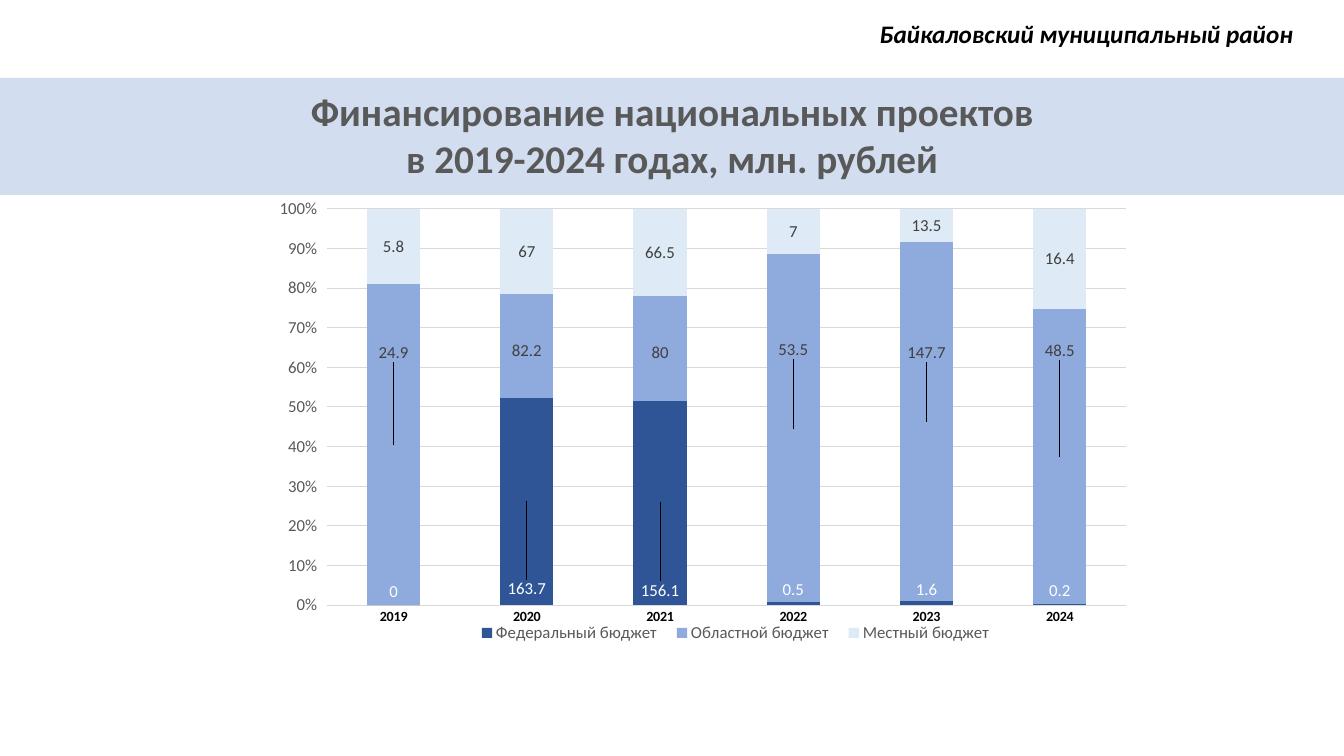
from dataclasses import dataclass

from lxml.etree import SubElement
from pptx import Presentation
from pptx.chart.data import CategoryChartData
from pptx.dml.color import RGBColor
from pptx.enum.chart import (XL_CHART_TYPE, XL_LABEL_POSITION,
                             XL_LEGEND_POSITION, XL_TICK_MARK)
from pptx.enum.shapes import MSO_SHAPE
from pptx.enum.text import MSO_ANCHOR, MSO_AUTO_SIZE, PP_ALIGN
from pptx.oxml.ns import qn
from pptx.util import Emu, Pt

PX = 914400 / 100.8


@dataclass(frozen=True)
class Theme:
    font: str = "Calibri"
    band: str = "D2DEEF"
    black: str = "000000"
    grey: str = "595959"
    dark: str = "404040"
    white: str = "FFFFFF"
    grid: str = "D9D9D9"
    title_size: int = 28
    district_size: int = 18
    chart_size: int = 12
    year_size: int = 10


THEME = Theme()

YEARS = ["2019", "2020", "2021", "2022", "2023", "2024"]
# name, fill, label colour, label level as a share of the axis (None: centred)
BUDGETS = [
    ("Федеральный бюджет", "2F5597", THEME.white, 0.04,
     [0, 163.7, 156.1, 0.5, 1.6, 0.2]),
    ("Областной бюджет", "8FAADC", THEME.dark, 0.64,
     [24.9, 82.2, 80, 53.5, 147.7, 48.5]),
    ("Местный бюджет", "DEEBF7", THEME.dark, None,
     [5.8, 67, 66.5, 7, 13.5, 16.4]),
]
PLOT = {"x": 0.09, "y": 0.03, "w": 0.91, "h": 0.86}
LEGEND = {"x": 0.25, "y": 0.92, "w": 0.61, "h": 0.06}


def px(*lengths):
    return [Emu(round(n * PX)) for n in lengths]


def style_font(font, size, color, bold=False, italic=False):
    font.name = THEME.font
    font.size = Pt(size)
    font.bold = bold
    font.italic = italic
    font.color.rgb = RGBColor.from_string(color)


def style_line(line):
    line.color.rgb = RGBColor.from_string(THEME.grid)
    line.width = Pt(0.75)


def add_band(slide, box):
    sp = slide.shapes.add_shape(MSO_SHAPE.RECTANGLE, *px(*box))
    sp.shadow.inherit = False
    sp.fill.solid()
    sp.fill.fore_color.rgb = RGBColor.from_string(THEME.band)
    sp.line.fill.background()
    # Keep the band behind the title
    slide.shapes._spTree.insert(2, sp._element)


def set_text(sp, box, text, size, color, italic=False):
    sp.left, sp.top, sp.width, sp.height = px(*box)
    tf = sp.text_frame
    tf.word_wrap = True
    tf.auto_size = MSO_AUTO_SIZE.NONE
    tf.vertical_anchor = MSO_ANCHOR.MIDDLE
    p = tf.paragraphs[0]
    p.text = text
    p.alignment = PP_ALIGN.CENTER
    for r in p.runs:
        style_font(r.font, size, color, bold=True, italic=italic)


def fill_layout(layout, values, target=None):
    """Write a manual chart layout into a c:layout element."""
    manual = SubElement(layout, qn("c:manualLayout"))
    settings = {}
    if target:
        settings["layoutTarget"] = target
    if "w" in values:
        settings.update(xMode="edge", yMode="edge")
    settings.update(values)
    for name, value in settings.items():
        SubElement(manual, qn(f"c:{name}")).set("val", str(value))


def place_layout(parent, after, values, target=None):
    for old in parent.findall(qn("c:layout")):
        parent.remove(old)
    layout = SubElement(parent, qn("c:layout"))
    if after is None:
        parent.insert(0, layout)
    else:
        after.addnext(layout)
    fill_layout(layout, values, target)


def label_shift(row, column, level):
    """Distance from the middle of a bar segment to the wanted level."""
    stack = [values[column] for *_, values in BUDGETS]
    middle = (sum(stack[:row]) + stack[row] / 2) / sum(stack)
    return round((middle - level) * PLOT["h"], 2)


def style_series(series, row):
    _, fill, label_color, level, values = BUDGETS[row]
    series.format.fill.solid()
    series.format.fill.fore_color.rgb = RGBColor.from_string(fill)
    labels = series.data_labels
    labels.show_value = True
    labels.position = XL_LABEL_POSITION.CENTER
    style_font(labels.font, THEME.chart_size, label_color)
    if level is None:
        return
    for i in range(len(values)):
        label = series.points[i].data_label
        style_font(label.font, THEME.chart_size, label_color)
        label.position = XL_LABEL_POSITION.CENTER
    for i, label in enumerate(series._element.iter(qn("c:dLbl"))):
        shift = {"x": 0, "y": label_shift(row, i, level)}
        place_layout(label, label.find(qn("c:idx")), shift)


def style_axes(chart):
    years = chart.category_axis
    years.major_tick_mark = XL_TICK_MARK.NONE
    style_font(years.tick_labels.font, THEME.year_size, THEME.black, bold=True)
    style_line(years.format.line)

    shares = chart.value_axis
    shares.minimum_scale, shares.maximum_scale = 0, 1
    shares.major_unit = 0.1
    shares.tick_labels.number_format = "0%"
    shares.tick_labels.number_format_is_linked = False
    style_font(shares.tick_labels.font, THEME.chart_size, THEME.grey)
    shares.format.line.fill.background()
    style_line(shares.major_gridlines.format.line)


def add_budget_chart(slide, box):
    data = CategoryChartData()
    data.categories = YEARS
    for name, *_, values in BUDGETS:
        data.add_series(name, values)
    chart = slide.shapes.add_chart(
        XL_CHART_TYPE.COLUMN_STACKED_100, *px(*box), data).chart
    chart.has_title = False
    style_font(chart.font, THEME.chart_size, THEME.grey)

    # Columns and their labels
    plot = chart.plots[0]
    plot.gap_width, plot.overlap = 150, 100
    plot.vary_by_categories = False
    for row, series in enumerate(plot.series):
        style_series(series, row)
    style_axes(chart)

    # Legend and plot area positions
    chart.has_legend = True
    legend = chart.legend
    legend.position = XL_LEGEND_POSITION.BOTTOM
    legend.include_in_layout = False
    style_font(legend.font, THEME.chart_size, THEME.grey)
    legend_xml = legend._element
    place_layout(legend_xml, legend_xml.find(qn("c:legendPos")), LEGEND)
    place_layout(chart._chartSpace.chart.plotArea, None, PLOT, "inner")


def main():
    prs = Presentation()
    prs.slide_width, prs.slide_height = px(1344, 756)
    slide = prs.slides.add_slide(prs.slide_layouts[5])

    # Heading on its band
    add_band(slide, (0, 78, 1344, 117))
    set_text(slide.shapes.title, (0, 82, 1344, 105),
             "Финансирование национальных проектов\v"
             "в 2019-2024 годах, млн. рублей",
             THEME.title_size, THEME.grey)

    # Budget shares by year
    add_budget_chart(slide, (248, 195, 879, 461))

    # District name
    district = slide.shapes.add_textbox(*px(847, 13, 479, 40))
    set_text(district, (847, 13, 479, 40), "Байкаловский муниципальный район",
             THEME.district_size, THEME.black, italic=True)

    prs.save("out.pptx")


if __name__ == "__main__":
    main()
